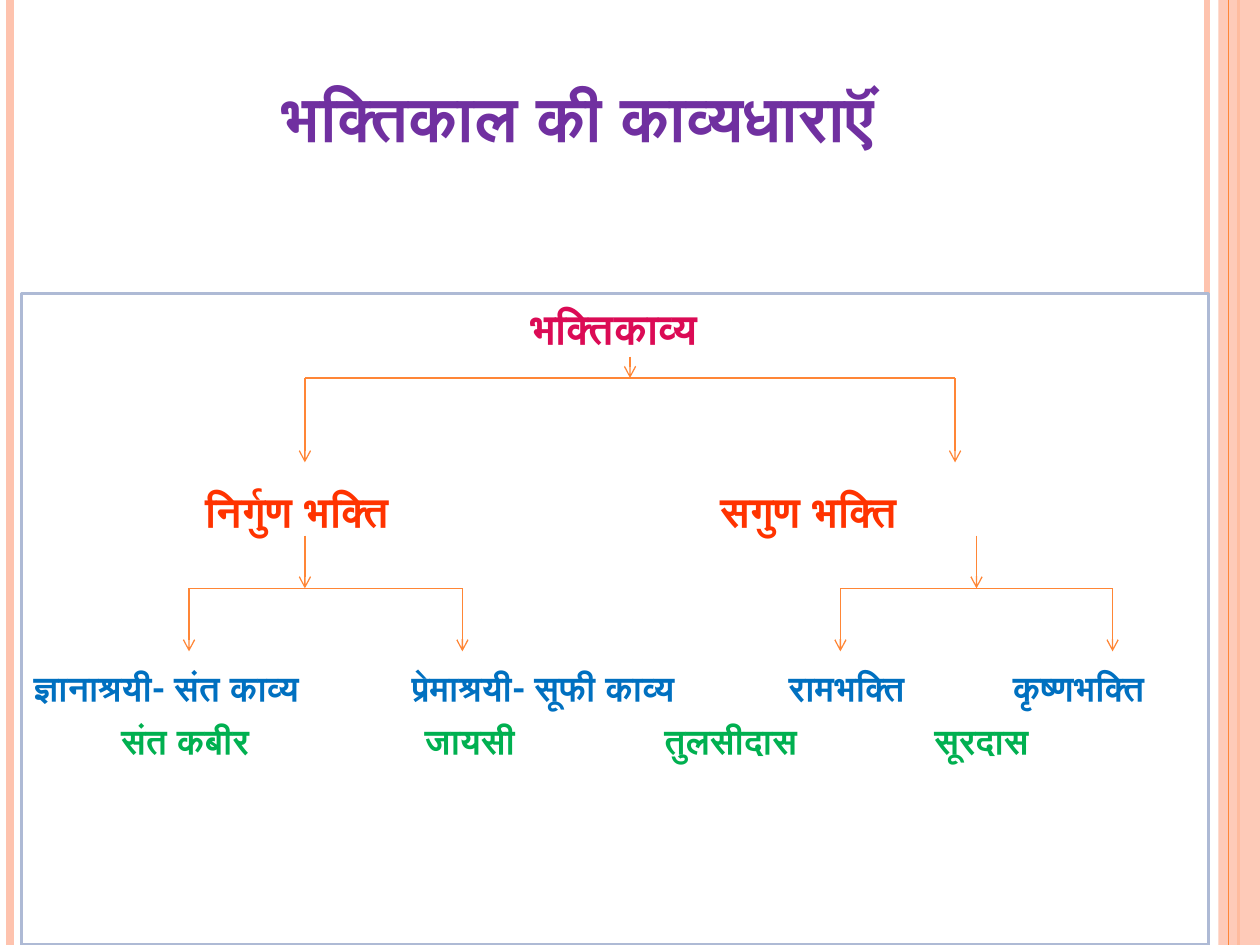
import pptx
import pptx.util
import pptx.dml.color
from lxml import etree
from pptx.enum.shapes import MSO_CONNECTOR, MSO_SHAPE
from pptx.enum.text import MSO_ANCHOR, PP_ALIGN
from pptx.oxml.ns import qn
from pptx.util import Inches, Pt

COLORS = {
    "white": "FFFFFF", "peach": "FEC3AE", "orange": "FE8637",
    "branch": "FF8636", "border": "AEBAD5", "title": "7030A0",
    "root": "DB0B55", "group": "FF3300", "school": "0070C0", "poet": "00B050",
}


def rgb(name):
    return pptx.dml.color.RGBColor.from_string(COLORS[name])


def add_line(s, x1, y1, x2, y2, color="branch", width=0.75, arrow=False):
    c = s.shapes.add_connector(MSO_CONNECTOR.STRAIGHT, Inches(x1), Inches(y1),
                               Inches(x2), Inches(y2))
    c.line.color.rgb = rgb(color)
    c.line.width = Pt(width)
    if arrow:
        etree.SubElement(c.line._get_or_add_ln(), qn("a:tailEnd"), type="arrow")
    etree.SubElement(c._element.spPr, qn("a:effectLst"))


def add_rect(s, x, y, w, h, fill, border=None, alpha=None):
    sp = s.shapes.add_shape(MSO_SHAPE.RECTANGLE, Inches(x), Inches(y),
                            Inches(w), Inches(h))
    sp.shadow.inherit = False
    sp.fill.solid()
    sp.fill.fore_color.rgb = rgb(fill)
    if border:
        sp.line.color.rgb = rgb(border)
        sp.line.width = Pt(2)
    else:
        sp.line.fill.background()
    if alpha:
        clr = sp._element.spPr.find(qn("a:solidFill"))[0]
        etree.SubElement(clr, qn("a:alpha"), val=str(alpha * 1000))


def add_label(s, text, cx, cy, color, size, w=2.6, h=0.5, font="Roboto"):
    """Bold text centred on the point (cx, cy)."""
    sp = s.shapes.add_textbox(Inches(cx - w / 2), Inches(cy - h / 2),
                              Inches(w), Inches(h))
    tf = sp.text_frame
    tf.word_wrap = True
    tf.vertical_anchor = MSO_ANCHOR.MIDDLE
    tf.margin_left = tf.margin_right = tf.margin_top = tf.margin_bottom = 0
    p = tf.paragraphs[0]
    p.text = text
    p.alignment = PP_ALIGN.CENTER
    p.font.name = font
    p.font.size = Pt(size)
    p.font.bold = True
    p.font.color.rgb = rgb(color)


def add_fork(s, stem_x, top, bar_y, ends, bottom):
    """A stem arrow onto a bar, with an arrow down from each end of the bar."""
    add_line(s, stem_x, top, stem_x, bar_y, arrow=True)
    add_line(s, ends[0], bar_y, ends[1], bar_y)
    for x in ends:
        add_line(s, x, bar_y, x, bottom, arrow=True)


def add_frame(s):
    add_line(s, 9.58, 0, 9.58, 7.5, "peach", 3)
    add_line(s, 0.08, 0, 0.08, 7.5, "peach", 4.5)
    add_line(s, 9.83, 0, 9.83, 7.5, "orange", 1.5)
    add_rect(s, 9.67, 0, 0.33, 7.5, "peach", alpha=87)
    add_line(s, 9.75, 0, 9.75, 7.5, "orange")


def main():
    prs = pptx.Presentation()
    prs.slide_width, prs.slide_height = Inches(10), Inches(7.5)
    s = prs.slides.add_slide(prs.slide_layouts[6])
    add_frame(s)
    add_rect(s, 0.17, 2.33, 9.42, 5.17, "white", "border")

    add_fork(s, 5, 2.83, 3, (2.42, 7.58), 3.67)
    add_fork(s, 2.42, 4.25, 4.67, (1.5, 3.67), 5.17)
    add_fork(s, 7.75, 4.25, 4.67, (6.67, 8.83), 5.17)

    add_label(s, "भक्तिकाल की काव्यधाराऍं", 4.59, 0.92, "title", 36,
              w=8.17, h=1.25, font="Lato")
    rows = [
        (2.6, "root", 24, [("भक्तिकाव्य", 4.87)]),
        (4.05, "group", 24, [("निर्गुण भक्ति", 2.36), ("सगुण भक्ति", 6.42)]),
        (5.46, "school", 20, [("ज्ञानाश्रयी- संत काव्य", 1.32),
                              ("प्रेमाश्रयी- सूफी काव्य", 4.31),
                              ("रामभक्ति", 6.72), ("कृष्णभक्ति", 8.56)]),
        (5.88, "poet", 20, [("संत कबीर", 1.47), ("जायसी", 3.73),
                            ("तुलसीदास", 5.8), ("सूरदास", 7.79)]),
    ]
    for y, color, size, labels in rows:
        for text, x in labels:
            add_label(s, text, x, y, color, size)
    prs.save("out.pptx")


if __name__ == "__main__":
    main()
